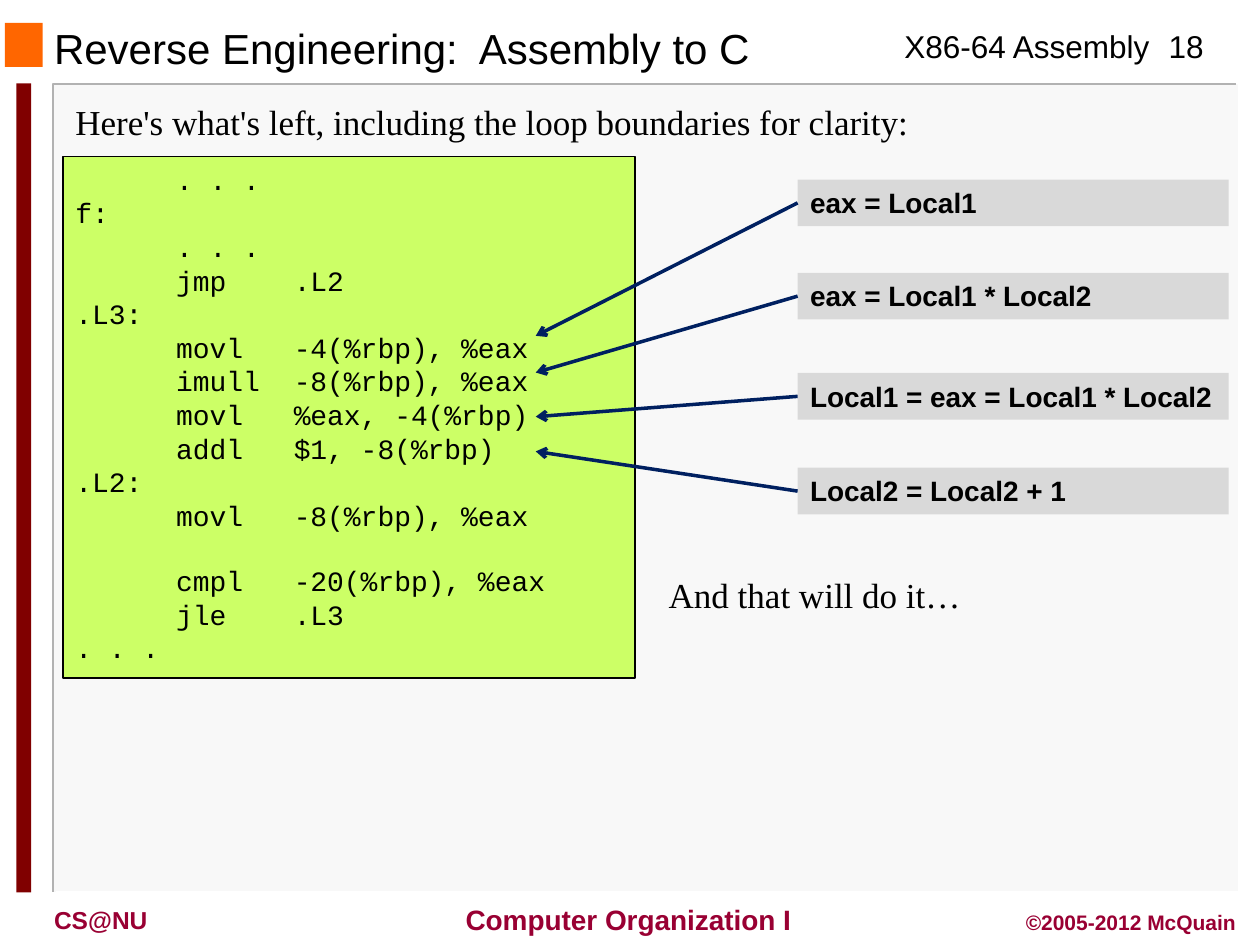
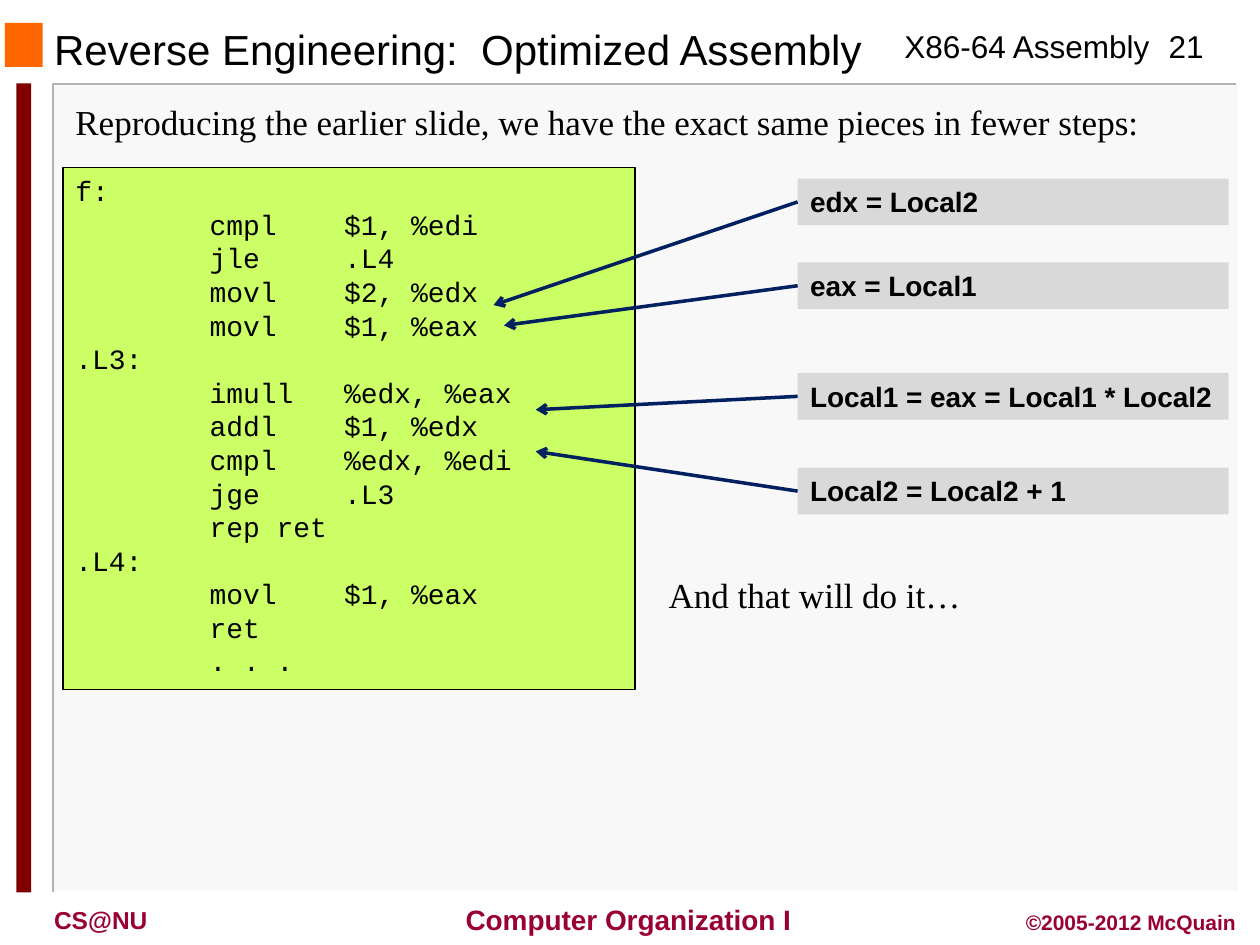
"""Builds two slides that map assembly instructions to C variables."""
from lxml import etree
from pptx import Presentation, util as u
from pptx.dml import color
from pptx.enum import shapes, text
from pptx.oxml import ns

INK, CRIMSON, NAVY = "000000", "990033", "002060"
ORANGE, MAROON, PAPER, RULE, WHITE = "FF6600", "800000", "F8F8F8", "B2B2B2", "FFFFFF"
LIME, GREY = "CCFF66", "D9D9D9"
LEFT, CENTER, RIGHT = text.PP_ALIGN.LEFT, text.PP_ALIGN.CENTER, text.PP_ALIGN.RIGHT
CODE_CHAR = 0.6 * 16
CODE_LINE = 18.1


def paint(fill, rgb):
    fill.solid()
    fill.fore_color.rgb = color.RGBColor.from_string(rgb)


def write(slide, words, box, size=18, font="Arial", ink=INK, bold=False, align=LEFT,
          middle=False, fill=None, outline=None, stops=()):
    place = [u.Cm(length) for length in box]
    if fill:
        shape = slide.shapes.add_shape(shapes.MSO_SHAPE.RECTANGLE, *place)
        shape.shadow.inherit = False
        paint(shape.fill, fill)
        if outline:
            paint(shape.line.fill, outline)
            shape.line.width = u.Pt(0.75)
        else:
            shape.line.fill.background()
    else:
        shape = slide.shapes.add_textbox(*place)
    frame = shape.text_frame
    frame.word_wrap = True
    frame.vertical_anchor = text.MSO_ANCHOR.MIDDLE if middle else text.MSO_ANCHOR.TOP
    paragraph, gap = frame.paragraphs[0], 0
    for number, line in enumerate(words.split("\n")):
        if number and not line:
            gap += CODE_LINE
            continue
        if number:
            paragraph = frame.add_paragraph()
        paragraph.alignment = align
        if gap:
            paragraph.space_before = u.Pt(gap)
            gap = 0
        if stops:
            tabs = etree.SubElement(paragraph._p.get_or_add_pPr(), ns.qn("a:tabLst"))
            for stop in stops:
                etree.SubElement(tabs, ns.qn("a:tab"), pos=str(u.Pt(stop * CODE_CHAR)), algn="l")
        if line:
            run = paragraph.add_run()
            run.text = line
            run.font.size, run.font.name, run.font.bold = u.Pt(size), font, bold
            paint(run.font.fill, ink)
    return shape


loop_code = """\t. . .
f:
\t. . .
\tjmp\t.L2
.L3:
\tmovl\t-4(%rbp), %eax
\timull\t-8(%rbp), %eax
\tmovl\t%eax, -4(%rbp)
\taddl\t$1, -8(%rbp)
.L2:
\tmovl\t-8(%rbp), %eax

\tcmpl\t-20(%rbp), %eax
\tjle\t.L3
. . ."""

optimized_code = """f:
\tcmpl\t$1, %edi
\tjle\t.L4
\tmovl\t$2, %edx
\tmovl\t$1, %eax
.L3:
\timull\t%edx, %eax
\taddl\t$1, %edx
\tcmpl\t%edx, %edi
\tjge\t.L3
\trep ret
.L4:
\tmovl\t$1, %eax
\tret
\t. . ."""

lessons = [
    dict(page="18", title="Reverse Engineering:  Assembly to C", title_height=0.97,
         intro="Here's what's left, including the loop boundaries for clarity:",
         code=loop_code, code_top=3.15, stops=(6, 13),
         meanings=[("eax = Local1", 3.62, 10.8, 6.77),
                   ("eax = Local1 * Local2", 5.5, 10.8, 7.51),
                   ("Local1 = eax = Local1 * Local2", 7.52, 10.8, 8.4),
                   ("Local2 = Local2 + 1", 9.43, 10.8, 9.1)]),
    dict(page="21", title="Reverse Engineering:  Optimized Assembly", title_height=1.02,
         intro="Reproducing the earlier slide, we have the exact same pieces in fewer steps:",
         code=optimized_code, code_top=3.38, stops=(8, 16),
         meanings=[("edx = Local2", 3.6, 9.95, 6.15),
                   ("eax = Local1", 5.29, 10.16, 6.56),
                   ("Local1 = eax = Local1 * Local2", 7.52, 10.8, 8.26),
                   ("Local2 = Local2 + 1", 9.43, 10.8, 9.1)]),
]

deck = Presentation()
deck.slide_width, deck.slide_height = u.Cm(25.4), u.Cm(19.05)

for lesson in lessons:
    slide = deck.slides.add_slide(deck.slide_layouts[6])

    write(slide, "", (1.09, 1.7, 23.88, 16.28), fill=PAPER)
    for rgb, corners in [(RULE, [(24.92, 1.7), (1.07, 1.7), (1.07, 17.98)]),
                         (WHITE, [(24.97, 1.7), (24.97, 17.98), (1.12, 17.98)])]:
        start, *rest = [(u.Cm(x), u.Cm(y)) for x, y in corners]
        pen = slide.shapes.build_freeform(*start)
        pen.add_line_segments(rest, close=False)
        edge = pen.convert_to_shape()
        edge.shadow.inherit = False
        edge.fill.background()
        paint(edge.line.fill, rgb)
        edge.line.width = u.Pt(1)
    write(slide, "", (0.1, 0.46, 0.76, 0.89), fill=ORANGE)
    write(slide, "", (0.33, 1.68, 0.3, 16.31), fill=MAROON)

    write(slide, "X86-64 Assembly", (17.98, 0.43, 5.8, 1.02))
    write(slide, lesson["page"], (23.06, 0.43, 1.7, 1.02), align=CENTER)
    write(slide, "CS@NU", (0.84, 18.11, 3.81, 0.84), size=14, ink=CRIMSON, bold=True)
    write(slide, "Computer Organization I", (8.89, 18.06, 7.56, 0.94), size=16, ink=CRIMSON,
          bold=True, align=CENTER, middle=True)
    write(slide, "©2005-2012 McQuain", (19.89, 18.21, 5.28, 0.76), size=12, ink=CRIMSON,
          bold=True, align=RIGHT)

    write(slide, lesson["title"], (0.84, 0.48, 17.14, lesson["title_height"]), size=24, middle=True)
    write(slide, lesson["intro"], (1.27, 1.9, 23.06, 1.12), size=20, font="Times New Roman")
    write(slide, lesson["code"], (1.27, lesson["code_top"], 11.53, 10.52), size=16,
          font="Courier New", fill=LIME, outline=INK, stops=lesson["stops"])
    write(slide, "And that will do it…", (13.23, 11.43, 11.53, 1.12), size=20,
          font="Times New Roman")

    for meaning, top, tip_x, tip_y in lesson["meanings"]:
        label = write(slide, meaning, (16.08, top, 8.69, 0.94), size=16, bold=True, fill=GREY)
        arrow = slide.shapes.add_connector(shapes.MSO_CONNECTOR.STRAIGHT, u.Cm(16.08),
                                           u.Cm(top + 0.47), u.Cm(tip_x), u.Cm(tip_y))
        arrow.begin_connect(label, 1)
        paint(arrow.line.fill, NAVY)
        arrow.line.width = u.Pt(2)
        etree.SubElement(arrow.line._get_or_add_ln(), ns.qn("a:tailEnd"), type="arrow")
        etree.SubElement(arrow._element.spPr, ns.qn("a:effectLst"))

deck.save("out.pptx")
